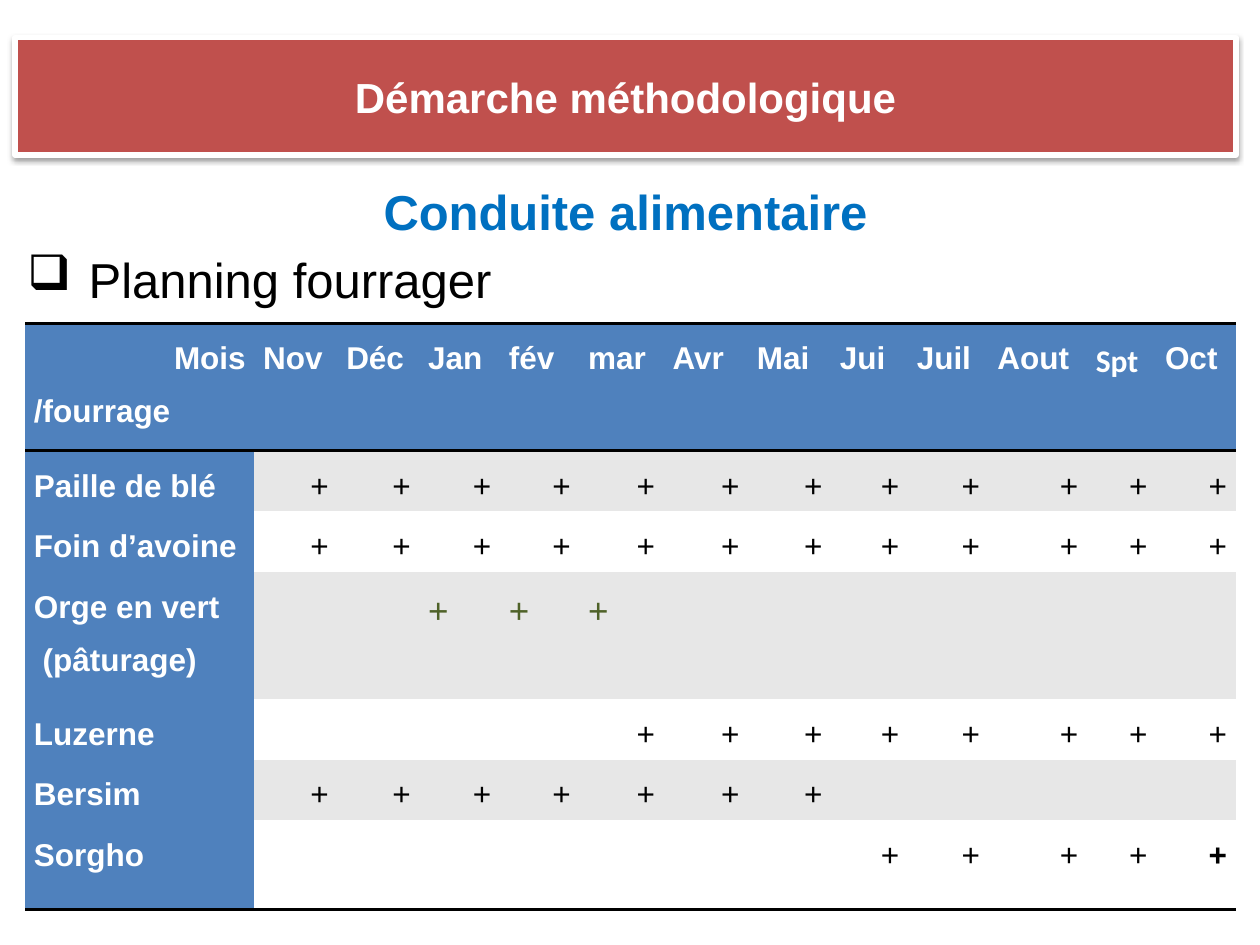
from lxml.etree import SubElement
from pptx import Presentation
from pptx.dml.color import RGBColor
from pptx.enum.shapes import MSO_SHAPE
from pptx.enum.text import MSO_ANCHOR, PP_ALIGN
from pptx.oxml import parse_xml
from pptx.oxml.ns import nsdecls, qn
from pptx.util import Pt

COLORS = {
    "banner": "C0504D",
    "heading": "0070C0",
    "header": "4F81BD",
    "band": "E7E7E7",
    "white": "FFFFFF",
    "black": "000000",
    "green": "4F6228",
}
PLAIN_TABLE_STYLE = "{2D5ABB26-0587-4C30-8999-92F81FD0307C}"
MONTHS = ["Nov", "Déc", "Jan", "fév", "mar", "Avr", "Mai", "Jui", "Juil", "Aout", "Spt", "Oct"]
# Each forage: label lines, first and last month in which it is given
FORAGES = [
    (["Paille de blé"], "Nov", "Oct"),
    (["Foin d’avoine"], "Nov", "Oct"),
    (["Orge en vert", " (pâturage)"], "Jan", "mar"),
    (["Luzerne"], "mar", "Oct"),
    (["Bersim"], "Nov", "Mai"),
    (["Sorgho"], "Jui", "Oct"),
]
COLUMN_WIDTHS = [131, 47.5, 46.8, 46.1, 45.4, 48.2, 48.2, 47.5, 43.9, 46.1, 56.2, 39.6, 45.4]
ROW_HEIGHTS = [72.7, 34.6, 34.6, 72.7, 34.6, 34.6, 51.1]


def color(name):
    return RGBColor.from_string(COLORS[name])


def style(para, size, ink, bold=False, font="Arial", align=PP_ALIGN.LEFT):
    para.alignment = align
    para.font.name = font
    para.font.size = Pt(size)
    para.font.bold = bold
    para.font.color.rgb = color(ink)


def add_banner(page, text):
    banner = page.shapes.add_shape(MSO_SHAPE.RECTANGLE, Pt(8.6), Pt(21.6), Pt(697.7), Pt(67))
    banner.shadow.inherit = False
    banner.fill.solid()
    banner.fill.fore_color.rgb = color("banner")
    banner.line.color.rgb = color("white")
    banner.line.width = Pt(3)
    effects = banner._element.spPr.find(qn("a:effectLst"))
    effects.append(parse_xml(
        f'<a:outerShdw {nsdecls("a")} blurRad="{Pt(3.1)}" dist="{Pt(1.6)}" dir="5400000" '
        f'rotWithShape="0"><a:srgbClr val="{COLORS["black"]}"><a:alpha val="38000"/>'
        '</a:srgbClr></a:outerShdw>'))
    banner.text_frame.vertical_anchor = MSO_ANCHOR.MIDDLE
    para = banner.text_frame.paragraphs[0]
    para.text = text
    style(para, 24, "white", bold=True, align=PP_ALIGN.CENTER)


def add_headings(page, heading, item):
    box = page.shapes.add_textbox(Pt(8.6), Pt(100), Pt(697.7), Pt(80))
    frame = box.text_frame
    frame.word_wrap = True
    title = frame.paragraphs[0]
    title.text = heading
    style(title, 28, "heading", bold=True, align=PP_ALIGN.CENTER)

    bullet = frame.add_paragraph()
    bullet.text = item
    bullet.space_before = Pt(5.6)
    style(bullet, 28, "black")
    properties = bullet._p.get_or_add_pPr()
    properties.set("marL", str(Pt(35)))
    properties.set("indent", str(-Pt(35)))
    mark = parse_xml(f'<a:buChar {nsdecls("a")} char="❑"/>')
    properties.find(qn("a:defRPr")).addprevious(mark)


def fill_cell(cell, fill, lines=()):
    """Set fill and margins, write the lines and return their paragraphs."""
    cell.fill.solid()
    cell.fill.fore_color.rgb = color(fill)
    cell.margin_left = cell.margin_right = Pt(5)
    cell.margin_top = cell.margin_bottom = 0
    frame = cell.text_frame
    frame.text = "\n".join(lines)
    for para in frame.paragraphs:
        para.line_spacing = 1.5
        style(para, 18, "white", bold=True, align=PP_ALIGN.JUSTIFY)
    return frame.paragraphs


def add_rule(cell, side):
    """Draw a black border on the top (lnT) or bottom (lnB) of a cell."""
    cell._tc.get_or_add_tcPr().insert(0, parse_xml(
        f'<a:{side} {nsdecls("a")} w="{Pt(2)}"><a:solidFill>'
        f'<a:srgbClr val="{COLORS["black"]}"/></a:solidFill></a:{side}>'))


def write_mark(para, bold):
    """Set a month's mark from right to left."""
    style(para, 18, "black", bold=bold, font="Calibri", align=PP_ALIGN.JUSTIFY)
    para._p.get_or_add_pPr().set("rtl", "1")
    span = para.runs[0]
    span.font.name = "Calibri"
    SubElement(span._r.get_or_add_rPr(), qn("a:cs"), typeface="Arial")


def fill_forage_row(table, row, labels, first, last):
    fill_cell(table.cell(row, 0), "header", labels)
    start, end = MONTHS.index(first), MONTHS.index(last)
    for column, month in enumerate(MONTHS):
        given = start <= column <= end
        para = fill_cell(table.cell(row, column + 1), "band" if row % 2 else "white",
                         ["+"] if given else [])[0]
        if given and labels[0] == "Orge en vert":
            style(para, 20, "green", align=PP_ALIGN.JUSTIFY)
        elif given:
            write_mark(para, bold=labels[0] == "Sorgho" and month == "Oct")


def add_planning(page):
    frame = page.shapes.add_table(len(ROW_HEIGHTS), len(COLUMN_WIDTHS), Pt(14.4), Pt(185),
                                  Pt(sum(COLUMN_WIDTHS)), Pt(sum(ROW_HEIGHTS)))
    table = frame.table
    table.horz_banding = False
    table._tbl.tblPr.find(qn("a:tableStyleId")).text = PLAIN_TABLE_STYLE
    for column, width in zip(table.columns, COLUMN_WIDTHS):
        column.width = Pt(width)
    for row, height in zip(table.rows, ROW_HEIGHTS):
        row.height = Pt(height)

    corner = fill_cell(table.cell(0, 0), "header", ["Mois", "/fourrage"])
    corner[0].alignment = PP_ALIGN.RIGHT
    for column, month in enumerate(MONTHS, start=1):
        para = fill_cell(table.cell(0, column), "header", [month])[0]
        if month == "Spt":
            para.font.name = "Calibri"
    for row, forage in enumerate(FORAGES, start=1):
        fill_forage_row(table, row, *forage)

    for column in range(len(COLUMN_WIDTHS)):
        add_rule(table.cell(0, column), "lnB")
        add_rule(table.cell(0, column), "lnT")
        add_rule(table.cell(len(FORAGES), column), "lnB")


def main():
    deck = Presentation()
    deck.slide_width, deck.slide_height = Pt(720), Pt(540)
    page = deck.slides.add_slide(deck.slide_layouts[6])
    add_banner(page, "Démarche méthodologique")
    add_headings(page, "Conduite alimentaire", "Planning fourrager")
    add_planning(page)
    deck.save("out.pptx")


if __name__ == "__main__":
    main()
